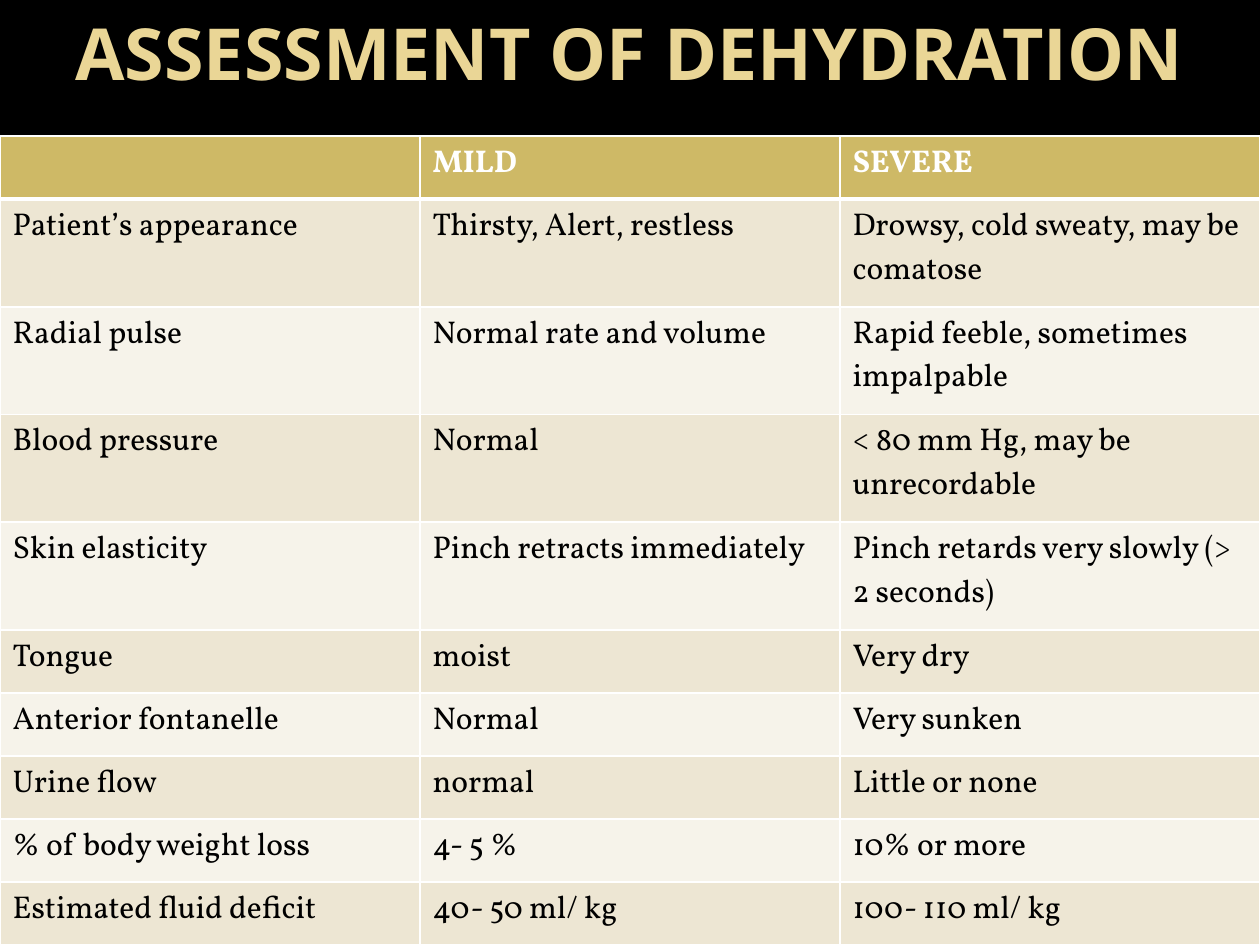
"""Build the dehydration assessment slide."""
from dataclasses import dataclass

from lxml.etree import SubElement as Sub
from pptx import Presentation as Deck
from pptx.dml.color import RGBColor as Rgb
from pptx.enum.text import MSO_ANCHOR as Anchor, PP_ALIGN as Align
from pptx.oxml.ns import qn
from pptx.util import Inches, Pt

HUES = {
    "back": "000000",
    "title": "EAD696",
    "head": "CEB966",
    "odd": "EDE6D3",
    "even": "F6F3EA",
    "text": "000000",
    "line": "FFFFFF",
}
WIDE, HIGH = 10, 7.5
TOP, FULL = 1.08, 6.42
LOW = 0.5


@dataclass
class Row:
    sign: str
    mild: str
    severe: str
    tall: bool = False


ROWS = [
    Row("", "MILD", "SEVERE"),
    Row("Patient’s appearance", "Thirsty, Alert, restless",
        "Drowsy, cold sweaty, may be comatose", True),
    Row("Radial pulse", "Normal rate and volume",
        "Rapid feeble, sometimes impalpable", True),
    Row("Blood pressure", "Normal", "< 80 mm Hg, may be unrecordable", True),
    Row("Skin elasticity", "Pinch retracts immediately",
        "Pinch retards very slowly (> 2 seconds)", True),
    Row("Tongue", "moist", "Very dry"),
    Row("Anterior fontanelle", "Normal", "Very sunken"),
    Row("Urine flow", "normal", "Little or none"),
    Row("% of body weight loss", "4- 5 %", "10% or more"),
    Row("Estimated fluid deficit", "40- 50 ml/ kg", "100- 110 ml/ kg"),
]


def tint(name: str) -> Rgb:
    return Rgb.from_string(HUES[name])


def write(par, text: str, face: str, size: float, hue: str, bold: bool) -> None:
    run = par.add_run()
    run.text = text
    font = run.font
    font.name, font.size, font.bold = face, Pt(size), bold
    font.color.rgb = tint(hue)


def edge(cell, side: str, size: float) -> None:
    props = cell._tc.get_or_add_tcPr()
    line = Sub(props, qn(f"a:ln{side}"), w=str(Pt(size)))
    fill = Sub(line, qn("a:solidFill"))
    Sub(fill, qn("a:srgbClr"), val=HUES["line"])


def draw_cell(cell, text: str, num: int) -> None:
    head = num == 0
    sizes = {"L": 1, "R": 1, "T": 3 if num == 1 else 1, "B": 3 if head else 1}
    for side, size in sizes.items():
        edge(cell, side, size)
    cell.fill.solid()
    cell.fill.fore_color.rgb = tint(
        "head" if head else "odd" if num % 2 else "even")
    if text:
        write(cell.text_frame.paragraphs[0], text, "Vollkorn", 18,
              "line" if head else "text", head)


def draw_table(slide, rows: list[Row]) -> None:
    grid = slide.shapes.add_table(
        len(rows), 3, Inches(0), Inches(TOP), Inches(WIDE), Inches(FULL)).table
    count = sum(row.tall for row in rows)
    tall = (FULL - LOW * (len(rows) - count)) / count
    for num, row in enumerate(rows):
        grid.rows[num].height = Inches(tall if row.tall else LOW)
        for col, text in enumerate((row.sign, row.mild, row.severe)):
            draw_cell(grid.cell(num, col), text, num)


def draw_title(slide, text: str) -> None:
    title = slide.shapes.title
    title.left, title.top = Inches(0), Inches(0)
    title.width, title.height = Inches(WIDE), Inches(0.83)
    frame = title.text_frame
    frame.word_wrap = True
    frame.vertical_anchor = Anchor.MIDDLE
    par = frame.paragraphs[0]
    par.alignment = Align.CENTER
    write(par, text, "Open Sans", 41, "title", True)


def main() -> None:
    deck = Deck()
    deck.slide_width, deck.slide_height = Inches(WIDE), Inches(HIGH)
    slide = deck.slides.add_slide(deck.slide_layouts[5])
    back = slide.background.fill
    back.solid()
    back.fore_color.rgb = tint("back")
    draw_title(slide, "ASSESSMENT OF DEHYDRATION")
    draw_table(slide, ROWS)
    deck.save("out.pptx")


if __name__ == "__main__":
    main()
